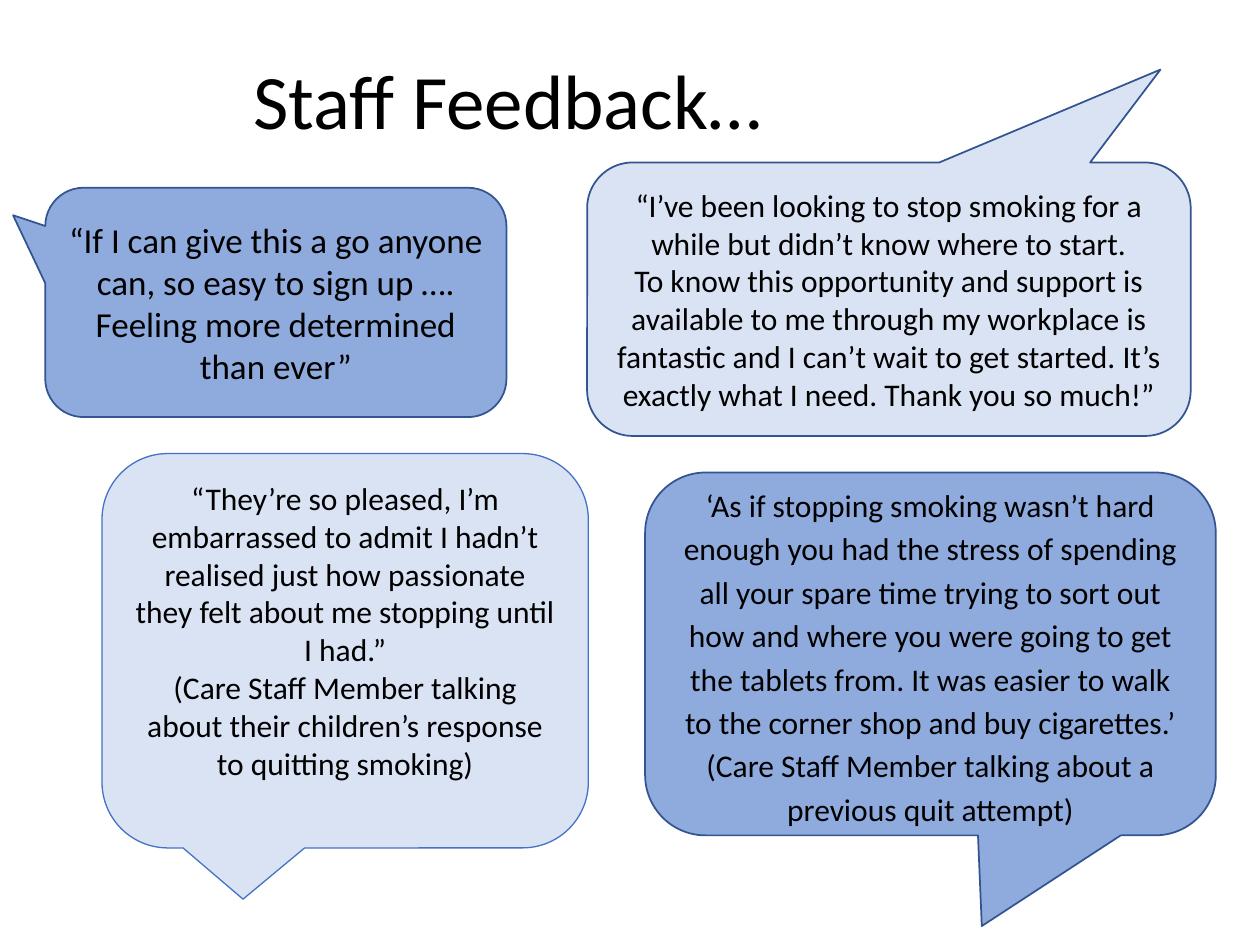
from pptx import Presentation
from pptx.dml.color import RGBColor as Color
from pptx.enum.shapes import MSO_SHAPE as Shape
from pptx.enum.text import MSO_ANCHOR as Anchor, PP_ALIGN as Align
from pptx.util import Inches, Pt

COLORS = {
    "text": "000000",
    "pale": "DAE3F3",
    "mid": "8FAADC",
    "dark line": "325491",
    "bright line": "4472C4",
}
WIDTH, HEIGHT = Inches(10), Inches(7.5)
UNIT = WIDTH / 100  # one percent of the slide width


def place(shape, left, top, width, height):
    shape.left, shape.top = round(left * UNIT), round(top * UNIT)
    shape.width, shape.height = round(width * UNIT), round(height * UNIT)


def add_text(para, text, size, align):
    para.alignment = align
    span = para.add_run()
    span.text = text
    span.font.name = "Calibri"
    span.font.size = Pt(size)
    span.font.color.rgb = Color.from_string(COLORS["text"])


deck = Presentation()
deck.slide_width, deck.slide_height = WIDTH, HEIGHT
page = deck.slides.add_slide(deck.slide_layouts[5])

# Title
title = page.shapes.title
place(title, 19.1, 3, 74, 10.6)
title.text_frame.vertical_anchor = Anchor.MIDDLE
heading = title.text_frame.paragraphs[0]
heading.line_spacing = 0.9
add_text(heading, "Staff Feedback…", 44, Align.LEFT)

# Quotes: place, tail tip from the centre, fill, line, line width, text size,
# anchor, line spacing, space after, paragraphs
quotes = [
    ((46.6, 12.9, 47.9, 21.7), (0.45, -0.84), "pale", "dark line", 1, 18,
     Anchor.MIDDLE, None, None,
     ["“I’ve been looking to stop smoking for a while but didn’t know where "
      "to start.",
      "To know this opportunity and support is available to me through my "
      "workplace is fantastic and I can’t wait to get started. It’s exactly "
      "what I need. Thank you so much!”"]),
    ((8.1, 36, 38.6, 31.3), (-0.21, 0.63), "pale", "bright line", 0.75, 18,
     Anchor.TOP, None, None,
     ["“They’re so pleased, I’m embarrassed to admit I hadn’t realised just "
      "how passionate they felt about me stopping until I had.”",
      "(Care Staff Member talking about their children’s response to quitting "
      "smoking)"]),
    ((3.6, 14.9, 36.6, 18.2), (-0.57, -0.38), "mid", "dark line", 1, 20,
     Anchor.MIDDLE, None, None,
     ["“If I can give this a go anyone can, so easy to sign up …. Feeling "
      "more determined than ever”"]),
    ((51.2, 37.5, 45.3, 28.8), (0.09, 0.75), "mid", "dark line", 1, 18,
     Anchor.MIDDLE, 1.15, Pt(10),
     ["‘As if stopping smoking wasn’t hard enough you had the stress of "
      "spending all your spare time trying to sort out how and where you were "
      "going to get the tablets from. It was easier to walk to the corner "
      "shop and buy cigarettes.’ (Care Staff Member talking about a previous "
      "quit attempt)"]),
]

# Speech bubbles
for (area, tail, fill, line, line_width, size, anchor, spacing, after,
     texts) in quotes:
    bubble = page.shapes.add_shape(Shape.ROUNDED_RECTANGULAR_CALLOUT, 0, 0, 1, 1)
    place(bubble, *area)
    bubble.adjustments[0], bubble.adjustments[1] = tail
    bubble.shadow.inherit = False
    bubble.fill.solid()
    bubble.fill.fore_color.rgb = Color.from_string(COLORS[fill])
    bubble.line.color.rgb = Color.from_string(COLORS[line])
    bubble.line.width = Pt(line_width)
    frame = bubble.text_frame
    frame.word_wrap = True
    frame.vertical_anchor = anchor
    for index, text in enumerate(texts):
        para = frame.add_paragraph() if index else frame.paragraphs[0]
        para.line_spacing, para.space_after = spacing, after
        add_text(para, text, size, Align.CENTER)

deck.save("out.pptx")
